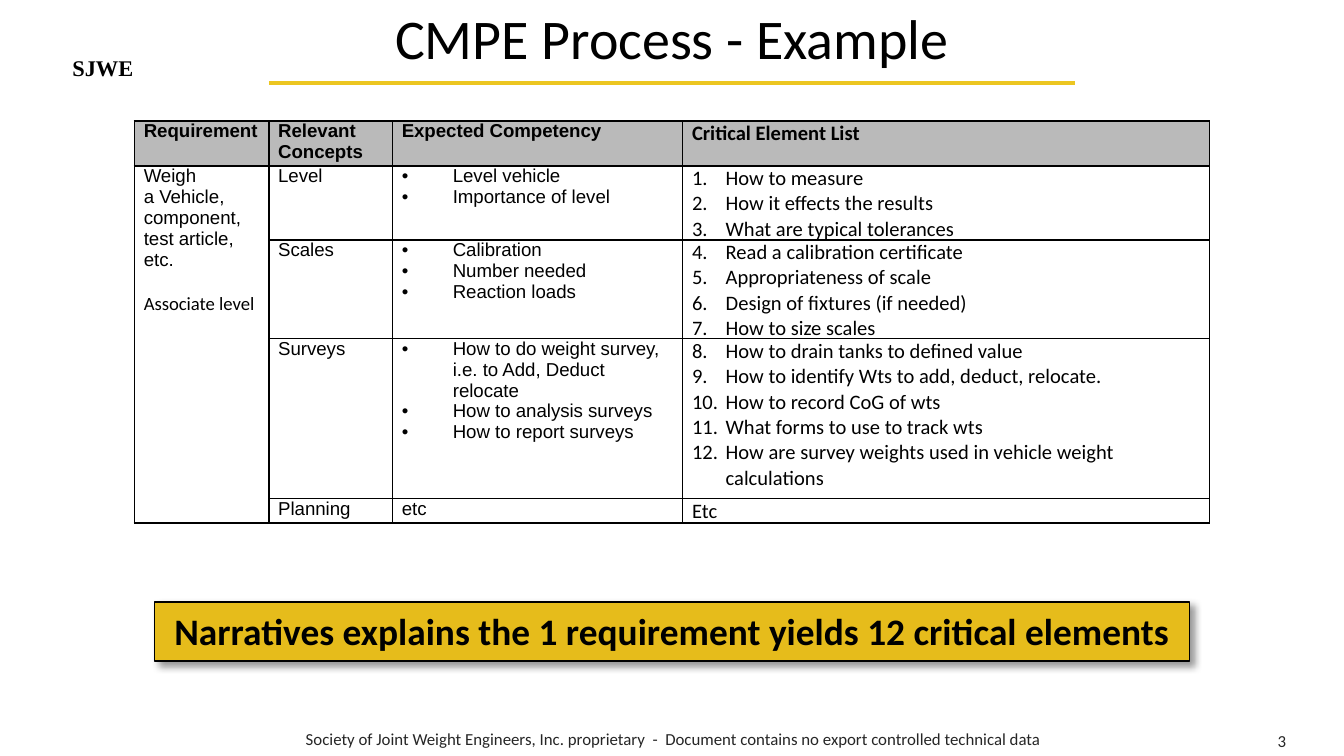
from dataclasses import dataclass

import lxml.etree
import pptx
import pptx.dml.color
import pptx.enum.shapes
import pptx.enum.text
import pptx.oxml.ns
import pptx.util

Inches = pptx.util.Inches
Pt = pptx.util.Pt
Align = pptx.enum.text.PP_ALIGN
Anchor = pptx.enum.text.MSO_ANCHOR

COLORS = {
    "ink": "000000",
    "footer": "262626",
    "rule": "ECC621",
    "banner": "E6BC1B",
    "header": "BABABA",
}
FOOTER = ("Society of Joint Weight Engineers, Inc. proprietary  -  "
          "Document contains no export controlled technical data")
BANNER = "Narratives explains the 1 requirement yields 12 critical elements"


@dataclass
class Label:
    text: str
    box: tuple
    size: float
    font: str = "Calibri"
    color: str = "ink"
    bold: bool = False
    align: Align = Align.CENTER
    anchor: Anchor = Anchor.MIDDLE
    insets: tuple = (0.04, 0.04)
    wrap: bool = True
    line_spacing: float = 1.0


@dataclass
class Concept:
    name: str
    competencies: list
    elements: list
    first_number: int = 0  # 0 leaves the row without bullets or numbers


LABELS = [
    Label("SJWE", (0.52, 0.4, 0.49, 0.2), 12, "Times New Roman", bold=True,
          anchor=Anchor.TOP, insets=(0, 0), wrap=False),
    Label("CMPE Process - Example", (0.69, 0, 8.62, 0.62), 30, line_spacing=0.9),
    Label("3", (9.39, 5.4, 0.22, 0.23), 9, color="footer", align=Align.RIGHT, wrap=False),
    Label(FOOTER, (1.17, 5.37, 7.67, 0.25), 9, color="footer", insets=(0.1, 0.05)),
]
BANNER_LABEL = Label(BANNER, (1.15, 4.48, 7.7, 0.44), 20, bold=True,
                     anchor=Anchor.TOP, insets=(0.1, 0.05), wrap=False)

HEADINGS = ["Requirement", "Relevant Concepts", "Expected Competency", "Critical Element List"]
COLUMN_WIDTHS = [1, 0.92, 2.16, 3.92]
ROW_HEIGHTS = [0.15, 0.51, 0.68, 1.19, 0.17]
CONCEPTS = [
    Concept("Level", ["Level vehicle", "Importance of level"],
            ["How to measure", "How it effects the results", "What are typical tolerances"], 1),
    Concept("Scales", ["Calibration", "Number needed", "Reaction loads"],
            ["Read a calibration certificate", "Appropriateness of scale",
             "Design of fixtures (if needed)", "How to size scales"], 4),
    Concept("Surveys",
            ["How to do weight survey, i.e. to Add, Deduct relocate",
             "How to analysis surveys", "How to report surveys"],
            ["How to drain tanks to defined value", "How to identify Wts to add, deduct, relocate.",
             "How to record CoG of wts", "What forms to use to track wts",
             "How are survey weights used in vehicle weight calculations"], 8),
    Concept("Planning", ["etc"], ["Etc"]),
]


def rgb(name: str) -> pptx.dml.color.RGBColor:
    return pptx.dml.color.RGBColor.from_string(COLORS[name])


def add_xml(parent, tag: str, **attributes):
    element = lxml.etree.SubElement(parent, pptx.oxml.ns.qn(tag))
    for key, value in attributes.items():
        element.set(key, str(value))
    return element


def format_font(font, size: float, name: str, bold: bool = False, color: str = "ink") -> None:
    for key, value in {"size": Pt(size), "name": name, "bold": bold}.items():
        setattr(font, key, value)
    font.color.rgb = rgb(color)


def write_label(frame, label: Label) -> None:
    across, down = (Inches(inset) for inset in label.insets)
    settings = {"margin_left": across, "margin_right": across, "margin_top": down,
                "margin_bottom": down, "word_wrap": label.wrap, "vertical_anchor": label.anchor}
    for key, value in settings.items():
        setattr(frame, key, value)
    paragraph = frame.paragraphs[0]
    paragraph.alignment = label.align
    paragraph.line_spacing = label.line_spacing
    run = paragraph.add_run()
    run.text = label.text
    format_font(run.font, label.size, label.font, label.bold, label.color)


def add_list_marker(paragraph, indent: float, tag: str, **attributes) -> None:
    properties = paragraph._p.get_or_add_pPr()
    properties.set("marL", str(Inches(indent)))
    properties.set("indent", str(-Inches(indent)))
    if tag == "a:buChar":
        add_xml(properties, "a:buFont", typeface="Arial")
    add_xml(properties, tag, **attributes)


def write_cell(cell, lines: list, size: float = 10, font: str = "Arial",
               bold: bool = False, marker: tuple = ()) -> None:
    frame = cell.text_frame
    for index, line in enumerate(lines):
        paragraph = frame.paragraphs[0] if index == 0 else frame.add_paragraph()
        if marker:
            indent, tag, attributes = marker
            add_list_marker(paragraph, indent, tag, **attributes)
        run = paragraph.add_run()
        run.text = line
        format_font(run.font, size, font, bold)


def frame_cell(cell, is_header: bool) -> None:
    margins = {"margin_left": 0.07, "margin_right": 0.07, "margin_top": 0, "margin_bottom": 0}
    for key, value in margins.items():
        setattr(cell, key, Inches(value))
    properties = cell._tc.get_or_add_tcPr()
    for side in ("a:lnL", "a:lnR", "a:lnT", "a:lnB"):
        border = add_xml(properties, side, w=Pt(1))
        add_xml(add_xml(border, "a:solidFill"), "a:srgbClr", val=COLORS["ink"])
    if is_header:
        cell.fill.solid()
        cell.fill.fore_color.rgb = rgb("header")
    else:
        cell.fill.background()


def add_competency_table(slide) -> None:
    holder = slide.shapes.add_table(len(ROW_HEIGHTS), len(COLUMN_WIDTHS),
                                    Inches(1), Inches(0.9), Inches(8), Inches(2.99))
    table = holder.table
    table.first_row = table.horz_banding = False
    for column, width in zip(table.columns, COLUMN_WIDTHS):
        column.width = Inches(width)
    for row, height in zip(table.rows, ROW_HEIGHTS):
        row.height = Inches(height)
    holder.height = Inches(2.99)

    for row_index, row in enumerate(table.rows):
        for cell in row.cells:
            frame_cell(cell, row_index == 0)
    for column, heading in enumerate(HEADINGS):
        size, font = (11, "Calibri") if column == 3 else (10, "Arial")
        write_cell(table.cell(0, column), [heading], size, font, bold=True)

    # Requirement spanning all concepts
    requirement = table.cell(1, 0)
    requirement.merge(table.cell(len(CONCEPTS), 0))
    write_cell(requirement, ["Weigh", "a Vehicle, component, test article, etc.", "Associate level"])
    level = requirement.text_frame.paragraphs[-1]
    level.space_before = Pt(12)
    level.runs[0].font.name = "Calibri"

    # One row per concept
    for row, concept in enumerate(CONCEPTS, start=1):
        bullets, numbers = (), ()
        if concept.first_number:
            bullets = (0.38, "a:buChar", {"char": "•"})
            numbers = (0.25, "a:buAutoNum",
                       {"type": "arabicPeriod", "startAt": concept.first_number})
        write_cell(table.cell(row, 1), [concept.name])
        write_cell(table.cell(row, 2), concept.competencies, marker=bullets)
        write_cell(table.cell(row, 3), concept.elements, 11, "Calibri", marker=numbers)


def add_banner(slide, label: Label) -> None:
    banner = slide.shapes.add_shape(pptx.enum.shapes.MSO_SHAPE.RECTANGLE,
                                    *(Inches(length) for length in label.box))
    banner.fill.solid()
    banner.fill.fore_color.rgb = rgb("banner")
    banner.line.color.rgb = rgb("ink")
    banner.line.width = Pt(0.75)
    banner.shadow.inherit = False
    effects = banner._element.spPr.find(pptx.oxml.ns.qn("a:effectLst"))
    shadow = add_xml(effects, "a:outerShdw", blurRad=Pt(4), dist=Pt(3), dir=45 * 60000,
                     algn="tl", rotWithShape=0)
    tint = add_xml(shadow, "a:srgbClr", val=COLORS["ink"])
    add_xml(tint, "a:alpha", val=40000)
    write_label(banner.text_frame, label)


def main() -> None:
    deck = pptx.Presentation()
    deck.slide_width = Inches(10)
    deck.slide_height = Inches(10 * 9 / 16)
    slide = deck.slides.add_slide(deck.slide_layouts[6])

    # Rule under the title
    rule = slide.shapes.add_connector(pptx.enum.shapes.MSO_CONNECTOR.STRAIGHT,
                                      Inches(2), Inches(0.62), Inches(8), Inches(0.62))
    rule.line.color.rgb = rgb("rule")
    rule.line.width = Pt(2.25)
    add_xml(rule._element.spPr, "a:effectLst")

    # Title, society initials, page number and footer
    for label in LABELS:
        box = slide.shapes.add_textbox(*(Inches(length) for length in label.box))
        write_label(box.text_frame, label)

    add_banner(slide, BANNER_LABEL)
    add_competency_table(slide)
    deck.save("out.pptx")


if __name__ == "__main__":
    main()
